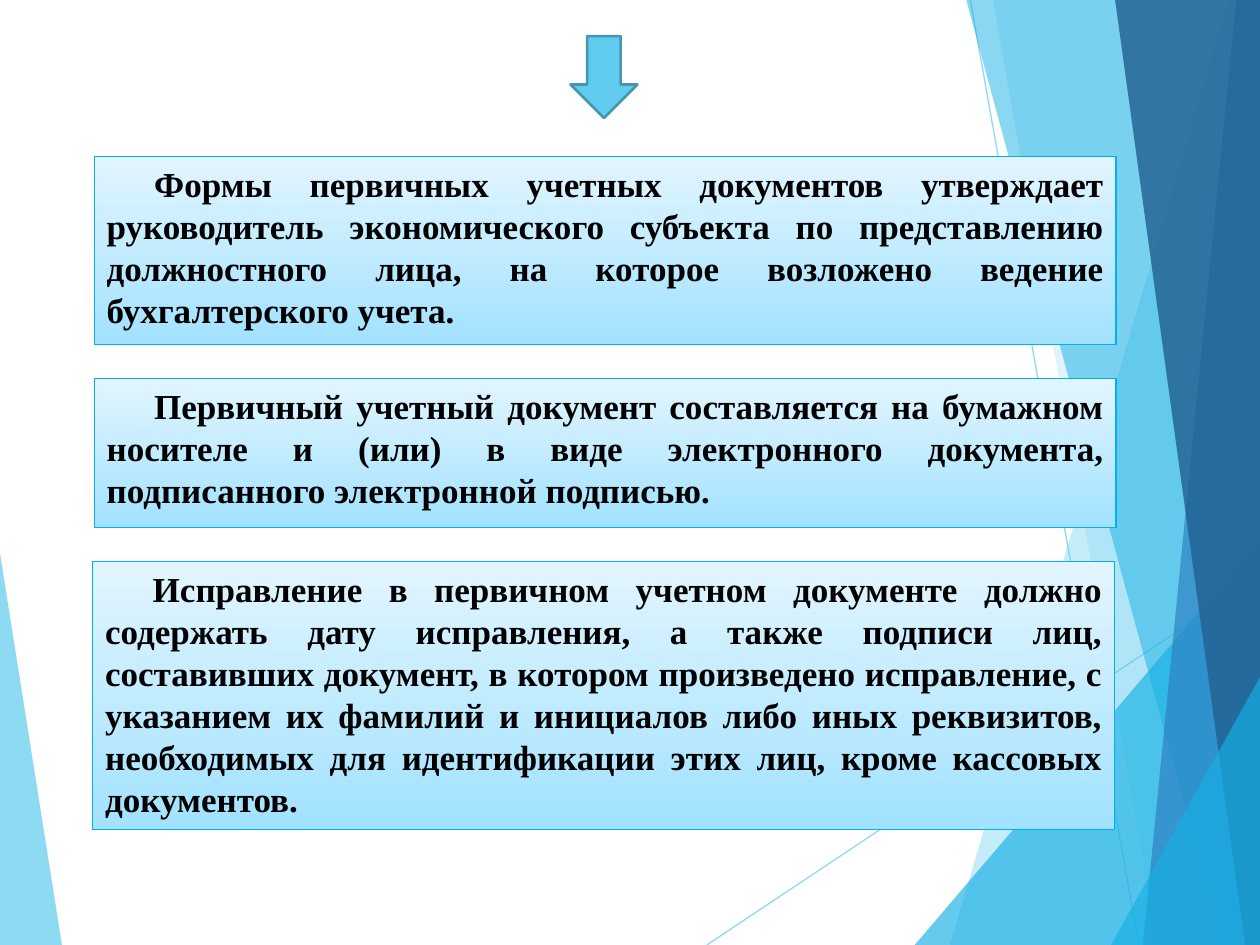
from lxml import etree
from pptx import Presentation
from pptx.dml.color import RGBColor
from pptx.enum.shapes import MSO_CONNECTOR, MSO_SHAPE
from pptx.enum.text import MSO_ANCHOR, PP_ALIGN
from pptx.oxml.ns import qn
from pptx.util import Cm, Pt

WIDTH, HEIGHT = 25.4, 19.05


def color(hex_string):
    return RGBColor.from_string(hex_string)


def set_opacity(fill_parent, percent):
    rgb = fill_parent.find(".//" + qn("a:srgbClr"))
    etree.SubElement(rgb, qn("a:alpha"), val=str(percent * 1000))


presentation = Presentation()
presentation.slide_width, presentation.slide_height = Cm(WIDTH), Cm(HEIGHT)
slide = presentation.slides.add_slide(presentation.slide_layouts[6])
shapes = slide.shapes

# Thin background rays
rays = [((14.25, HEIGHT), (WIDTH, 11.62)), ((19.56, 0), (22.96, HEIGHT))]
for start, end in rays:
    ray = shapes.add_connector(MSO_CONNECTOR.STRAIGHT, *map(Cm, start + end))
    ray.line.color.rgb = color("5FCBEF")
    ray.line.width = Pt(0.75)
    set_opacity(ray.line._get_or_add_ln(), 70)
    etree.SubElement(ray._element.spPr, qn("a:effectLst"))

# Translucent background facets: fill, opacity, corners
right_top, right_bottom = (WIDTH, 0), (WIDTH, HEIGHT)
facets = [
    ("5FCBEF", 70, [(0, 11.15), (1.25, HEIGHT), (0, HEIGHT)]),
    ("5FCBEF", 36, [(24.77, 0), (19.15, HEIGHT), right_bottom, right_top]),
    ("5FCBEF", 20, [(20.02, 0), (23.34, HEIGHT), right_bottom, right_top]),
    ("17B0E4", 66, [(18.44, HEIGHT), (WIDTH, 10.9), right_bottom]),
    ("17B0E4", 50, [(19.48, 0), (24.64, HEIGHT), right_bottom, right_top]),
    ("2E83C3", 70, [(24.92, 0), (23.04, HEIGHT), right_bottom, right_top]),
    ("226292", 82, [(22.48, 0), (25.1, HEIGHT), right_bottom, right_top]),
    ("17B0E4", 66, [(22.4, HEIGHT), (WIDTH, 13.65), right_bottom]),
]
for fill, opacity, corners in facets:
    points = [(Cm(x), Cm(y)) for x, y in corners]
    builder = shapes.build_freeform(*points[0])
    builder.add_line_segments(points[1:], close=True)
    facet = builder.convert_to_shape()
    facet.shadow.inherit = False
    facet.fill.solid()
    facet.fill.fore_color.rgb = color(fill)
    set_opacity(facet._element.spPr, opacity)
    facet.line.fill.background()

# Arrow leading down to the rules
arrow = shapes.add_shape(MSO_SHAPE.DOWN_ARROW, Cm(11.5), Cm(0.73), Cm(1.35), Cm(1.65))
arrow.shadow.inherit = False
arrow.fill.solid()
arrow.fill.fore_color.rgb = color("5FCBEF")
arrow.line.color.rgb = color("4696B1")
arrow.line.width = Pt(1.5)

# Rule boxes: left, top, height, text
rules = [
    (1.9, 3.15, 3.8,
     "Формы первичных учетных документов утверждает руководитель экономического "
     "субъекта по представлению должностного лица, на которое возложено ведение "
     "бухгалтерского учета."),
    (1.9, 7.63, 3.01,
     "Первичный учетный документ составляется на бумажном носителе и (или) в виде "
     "электронного документа, подписанного электронной подписью."),
    (1.87, 11.32, 5.41,
     "Исправление в первичном учетном документе должно содержать дату исправления, "
     "а также подписи лиц, составивших документ, в котором произведено исправление, "
     "с указанием их фамилий и инициалов либо иных реквизитов, необходимых для "
     "идентификации этих лиц, кроме кассовых документов."),
]
font_format = {"name": "Times New Roman", "size": Pt(20), "bold": True}
for left, top, height, text in rules:
    box = shapes.add_shape(MSO_SHAPE.RECTANGLE, Cm(left), Cm(top), Cm(20.6), Cm(height))
    box.shadow.inherit = False
    box.fill.gradient()
    box.fill.gradient_angle = 90
    for stop, shade in zip(box.fill.gradient_stops, ("A2E2FF", "E2F5FF")):
        stop.color.rgb = color(shade)
    for stop, position in zip(box.fill.gradient_stops, (0, 1)):
        stop.position = position
    box.line.color.rgb = color("00B0F0")
    box.line.width = Pt(0.75)

    frame = box.text_frame
    frame.word_wrap = True
    frame.vertical_anchor = MSO_ANCHOR.TOP
    paragraph = frame.paragraphs[0]
    paragraph.alignment = PP_ALIGN.JUSTIFY
    paragraph._p.get_or_add_pPr().set("indent", str(Cm(0.96)))
    run = paragraph.add_run()
    run.text = text
    for attribute, value in font_format.items():
        setattr(run.font, attribute, value)
    run.font.color.rgb = color("000000")

presentation.save("out.pptx")
